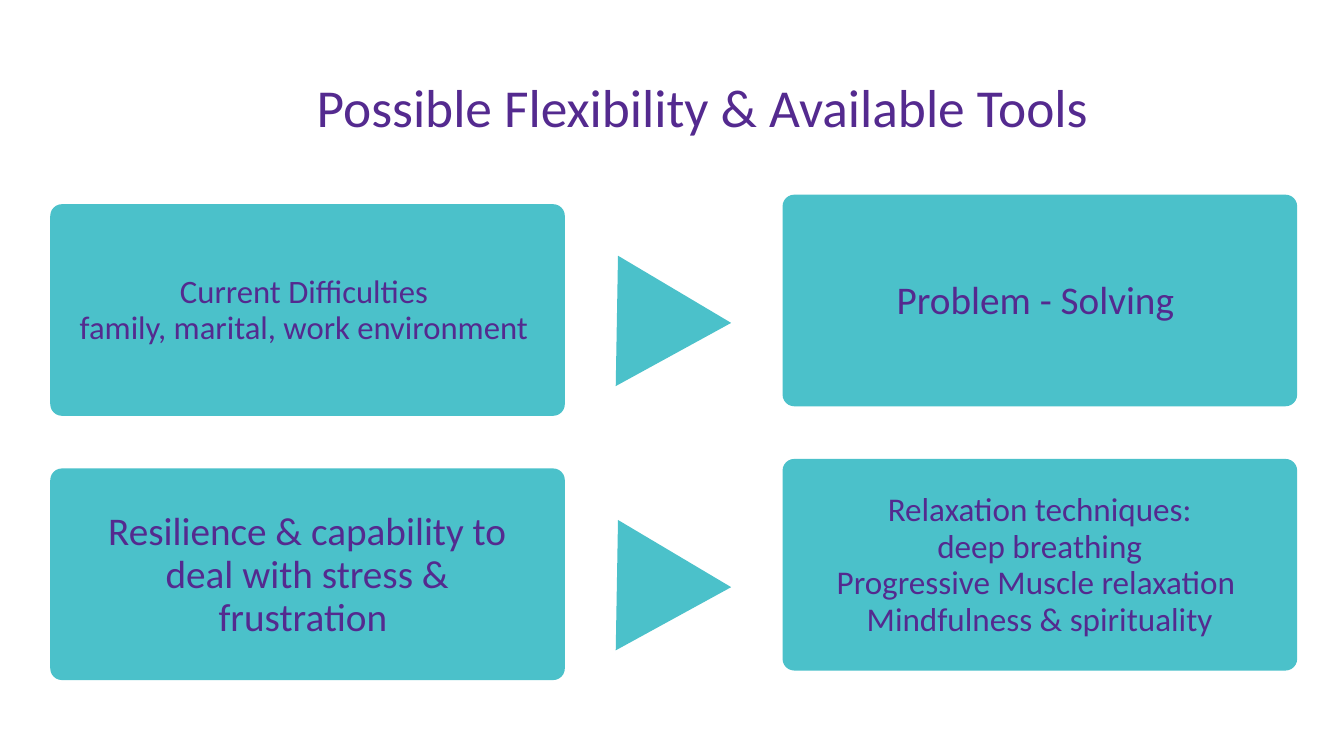
from pptx import Presentation
from pptx.dml.color import RGBColor
from pptx.enum.shapes import MSO_SHAPE
from pptx.enum.text import PP_ALIGN
from pptx.util import Cm, Pt

BOX = MSO_SHAPE.ROUNDED_RECTANGLE
ARROW = MSO_SHAPE.ISOSCELES_TRIANGLE
CENTER = PP_ALIGN.CENTER


class Theme:
    font = "Calibri"
    teal = RGBColor(0x4B, 0xC1, 0xCA)
    purple = RGBColor(0x54, 0x2A, 0x8F)
    title = 57.2
    large = 42
    small = 35
    list = 35.5
    leading = 1.1


def add_panel(kind, left, top, width, height):
    panel = slide.shapes.add_shape(kind, Cm(left), Cm(top), Cm(width), Cm(height))
    panel.shadow.inherit = False
    panel.fill.solid()
    panel.fill.fore_color.rgb = Theme.teal
    panel.line.fill.background()
    return panel


def add_text(left, top, width, height, size, lines):
    box = slide.shapes.add_textbox(Cm(left), Cm(top), Cm(width), Cm(height))
    frame = box.text_frame
    frame.word_wrap = True
    frame.margin_left = frame.margin_right = 0
    frame.margin_top = frame.margin_bottom = 0
    for i, line in enumerate(lines):
        para = frame.paragraphs[0] if i == 0 else frame.add_paragraph()
        para.alignment = CENTER
        para.line_spacing = Pt(round(size * Theme.leading, 1))
        run = para.add_run()
        run.text = line
        run.font.name = Theme.font
        run.font.size = Pt(size)
        run.font.color.rgb = Theme.purple


deck = Presentation()
deck.slide_width = Cm(50.8)
deck.slide_height = Cm(28.58)
slide = deck.slides.add_slide(deck.slide_layouts[6])

# Title
add_text(8.08, 3.02, 37.41, 2.24, Theme.title,
         ["Possible Flexibility & Available Tools "])

# Two rows: box, arrow, box
pitch = 9.99
for row in range(2):
    drop = row * pitch
    for left, top in ((1.9, 7.72), (29.58, 7.36)):
        panel = add_panel(BOX, left, top + drop, 19.45, 8)
        panel.adjustments[0] = 0.055
    arrow = add_panel(ARROW, 23.01, 10.01 + drop, 4.93, 4.32)
    arrow.rotation = 91

# Box texts: left, top, width, height, size, lines
notes = [
    (2.77, 10.36, 17.73, 2.74, Theme.small,
     ["Current Difficulties ", "family, marital, work environment "]),
    (31.09, 10.54, 16.43, 1.7, Theme.large, ["Problem - Solving "]),
    (3.4, 19.28, 16.43, 4.93, Theme.large,
     ["Resilience & capability to deal with stress & frustration "]),
    (31.09, 18.59, 16.43, 5.54, Theme.list,
     ["Relaxation techniques:", "deep breathing",
      "Progressive Muscle relaxation ", "Mindfulness & spirituality"]),
]
for note in notes:
    add_text(*note)

deck.save("out.pptx")
